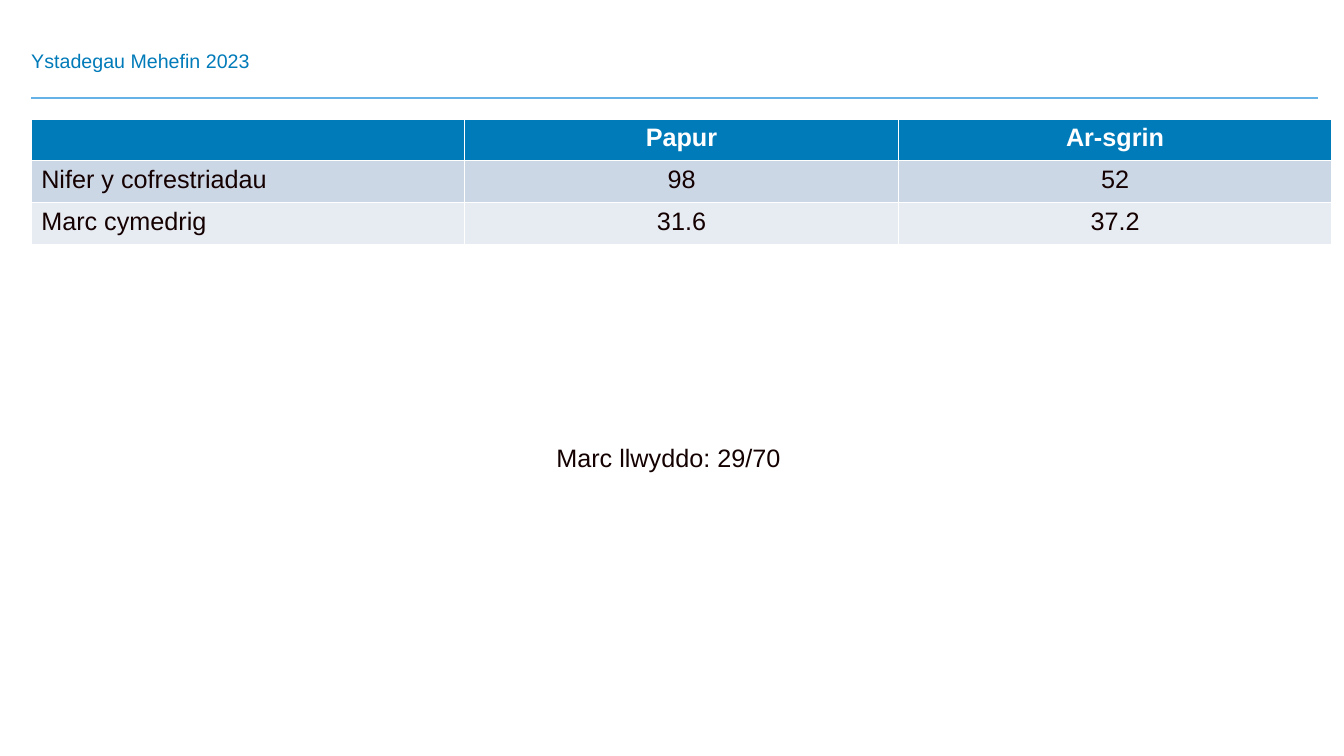
from dataclasses import dataclass

from lxml.etree import SubElement
from pptx import Presentation
from pptx.dml.color import RGBColor
from pptx.enum.shapes import MSO_CONNECTOR
from pptx.enum.text import MSO_ANCHOR, PP_ALIGN
from pptx.oxml.ns import qn
from pptx.slide import Slide
from pptx.text.text import TextFrame
from pptx.util import Inches, Pt

BLUE = "007BB9"
LIGHT_BLUE = "65B2E6"
DARK = "140000"
WHITE = "FFFFFF"
LEFT_MARGIN = 0.31
COLUMN_WIDTH = 4.3


@dataclass(frozen=True)
class TableRow:
    texts: tuple[str, ...]
    fill: str
    height: float = 0.42
    color: str = DARK
    bold: bool = False


ROWS = (
    TableRow(("", "Papur", "Ar-sgrin"), BLUE, height=0.41, color=WHITE, bold=True),
    TableRow(("Nifer y cofrestriadau", "98", "52"), "CCD7E6"),
    TableRow(("Marc cymedrig", "31.6", "37.2"), "E7ECF3"),
)


def rgb(color: str) -> RGBColor:
    return RGBColor.from_string(color)


def write_text(
    frame: TextFrame,
    text: str,
    *,
    size: float = 18,
    color: str = DARK,
    bold: bool = False,
    align: PP_ALIGN = PP_ALIGN.LEFT,
    line_spacing: float = 1.0,
) -> None:
    frame.text = text
    paragraph = frame.paragraphs[0]
    paragraph.alignment = align
    paragraph.line_spacing = line_spacing
    font = paragraph.font
    font.name = "Arial"
    font.size = Pt(size)
    font.bold = bold
    font.color.rgb = rgb(color)


def add_title(slide: Slide) -> None:
    title = slide.shapes.title
    title.left, title.top = Inches(LEFT_MARGIN), Inches(0.23)
    title.width, title.height = Inches(11.18), Inches(0.49)
    frame = title.text_frame
    frame.margin_left = frame.margin_right = 0
    frame.margin_top = frame.margin_bottom = 0
    frame.vertical_anchor = MSO_ANCHOR.BOTTOM
    write_text(frame, "Ystadegau Mehefin 2023", size=14, color=BLUE, line_spacing=0.9)


def add_title_rule(slide: Slide) -> None:
    rule = slide.shapes.add_connector(
        MSO_CONNECTOR.STRAIGHT,
        Inches(LEFT_MARGIN), Inches(0.97), Inches(13.07), Inches(0.97),
    )
    rule.line.color.rgb = rgb(LIGHT_BLUE)
    rule.line.width = Pt(1.75)
    SubElement(rule._element.spPr, qn("a:effectLst"))


def add_results_table(slide: Slide) -> None:
    """Add the table; its default style supplies the white borders."""
    column_count = len(ROWS[0].texts)
    table = slide.shapes.add_table(
        len(ROWS), column_count, Inches(LEFT_MARGIN), Inches(1.18),
        Inches(COLUMN_WIDTH * column_count), Inches(sum(row.height for row in ROWS)),
    ).table
    for row_index, row in enumerate(ROWS):
        table.rows[row_index].height = Inches(row.height)
        for column_index, text in enumerate(row.texts):
            cell = table.cell(row_index, column_index)
            cell.fill.solid()
            cell.fill.fore_color.rgb = rgb(row.fill)
            align = PP_ALIGN.CENTER if column_index else PP_ALIGN.LEFT
            write_text(cell.text_frame, text, color=row.color, bold=row.bold, align=align)


def add_pass_mark(slide: Slide) -> None:
    box = slide.shapes.add_textbox(Inches(5.42), Inches(4.34), Inches(2.7), Inches(0.4))
    box.text_frame.word_wrap = True
    write_text(box.text_frame, "Marc llwyddo: 29/70")


def main() -> None:
    presentation = Presentation()
    presentation.slide_width = Inches(13.33)
    presentation.slide_height = Inches(7.5)
    slide = presentation.slides.add_slide(presentation.slide_layouts[5])
    add_title_rule(slide)
    add_results_table(slide)
    add_title(slide)
    add_pass_mark(slide)
    presentation.save("out.pptx")


if __name__ == "__main__":
    main()
